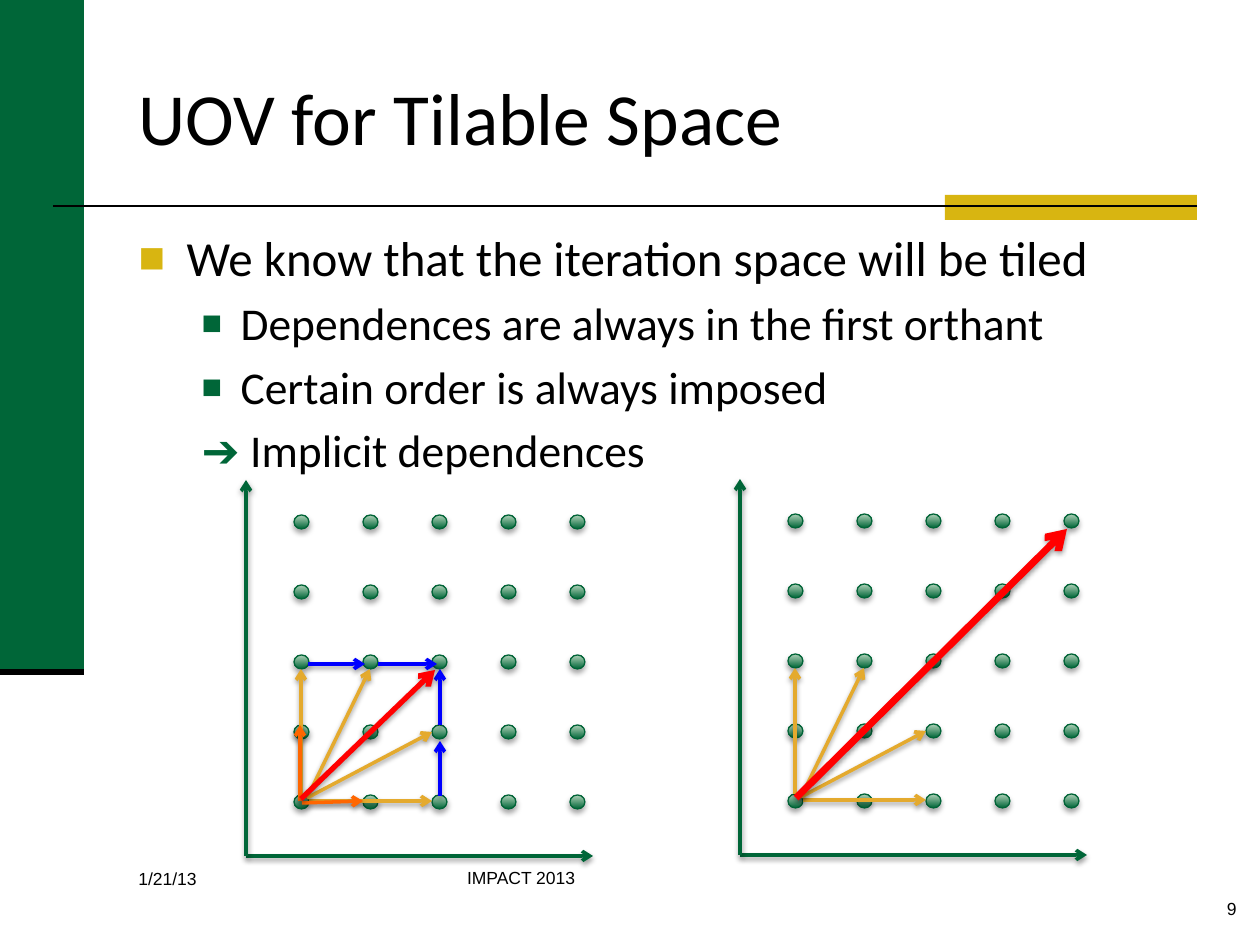
from lxml.etree import SubElement
from pptx import Presentation
from pptx.dml.color import RGBColor
from pptx.enum.shapes import MSO_CONNECTOR, MSO_SHAPE
from pptx.enum.text import MSO_ANCHOR, MSO_AUTO_SIZE, PP_ALIGN
from pptx.oxml.ns import qn
from pptx.util import Emu, Pt

SCALE = 914400 / 126  # EMU per px
BLACK = RGBColor(0x00, 0x00, 0x00)
GREEN = RGBColor(0x00, 0x66, 0x38)
EDGE = RGBColor(0x00, 0x64, 0x37)
MINT = RGBColor(0xB1, 0xD2, 0xB9)
GOLD = RGBColor(0xD8, 0xB5, 0x11)
AMBER = RGBColor(0xE4, 0xAA, 0x2E)
ORANGE = RGBColor(0xFF, 0x66, 0x00)
BLUE = RGBColor(0x00, 0x00, 0xFF)
RED = RGBColor(0xFF, 0x00, 0x00)


def px(*vals):
    return [Emu(round(v * SCALE)) for v in vals]


def add(parent, tag, **attrs):
    return SubElement(parent, qn(tag), {k: str(v) for k, v in attrs.items()})


class Deck:
    head, body, small = "Calibri", "Calibri", "Arial"

    def __init__(self):
        self.prs = Presentation()
        self.prs.slide_width, self.prs.slide_height = px(1260, 945)
        self.slide = self.prs.slides.add_slide(self.prs.slide_layouts[1])
        self.shapes = self.slide.shapes

    def font(self, para, name, size, color=BLACK):
        para.font.name, para.font.size = name, Pt(size)
        para.font.color.rgb = color

    def place(self, shape, box):
        shape.left, shape.top, shape.width, shape.height = px(*box)

    def title(self, box, text):
        shape = self.shapes.title
        self.place(shape, box)
        frame = shape.text_frame
        frame.text = text
        frame.vertical_anchor = MSO_ANCHOR.MIDDLE
        frame.auto_size = MSO_AUTO_SIZE.NONE
        para = frame.paragraphs[0]
        para.alignment = PP_ALIGN.LEFT
        self.font(para, self.head, 42)

    def bullet(self, para, left, hang, color=None, size=100):
        props = para._p.get_or_add_pPr()
        margin, indent = px(left, -hang)
        props.set("marL", str(margin))
        props.set("indent", str(indent))
        if color is None:
            add(props, "a:buNone")
            return
        add(add(props, "a:buClr"), "a:srgbClr", val=color)
        add(props, "a:buSzPct", val=size * 1000)
        add(props, "a:buFont", typeface="Arial")
        add(props, "a:buChar", char="■")

    def list(self, box, lead, items, last):
        shape = self.slide.placeholders[1]
        self.place(shape, box)
        frame = shape.text_frame
        frame.auto_size = MSO_AUTO_SIZE.NONE
        para = frame.paragraphs[0]
        para.text = lead
        self.bullet(para, 48, 48, GOLD, 90)
        para.space_before = Pt(0)
        self.font(para, self.body, 28)
        for item in items:
            para = frame.add_paragraph()
            para.text, para.level = item, 1
            self.bullet(para, 102, 39, GREEN, 75)
            self.font(para, self.body, 26)
        # The closing line carries its own arrow sign
        para = frame.add_paragraph()
        para.level = 1
        self.bullet(para, 63, 0)
        para.font.size = Pt(26)
        sign, words = last
        for text, name, color in ((sign, "Arial", GREEN),
                                  (words, self.body, BLACK)):
            run = para.add_run()
            run.text, run.font.name = text, name
            run.font.color.rgb = color

    def label(self, box, text, align=PP_ALIGN.LEFT):
        frame = self.shapes.add_textbox(*px(*box)).text_frame
        frame.word_wrap = True
        para = frame.paragraphs[0]
        para.text, para.alignment = text, align
        self.font(para, self.small, 10)

    def shade(self, shape, alpha, blur, dist):
        effects = add(shape._element.spPr, "a:effectLst")
        shadow = add(effects, "a:outerShdw", blurRad=Pt(blur), dist=Pt(dist),
                     dir=5400000, rotWithShape=0)
        color = add(shadow, "a:srgbClr", val=BLACK)
        add(color, "a:alpha", val=alpha * 1000)

    def rect(self, box, color):
        shape = self.shapes.add_shape(MSO_SHAPE.RECTANGLE, *px(*box))
        shape.shadow.inherit = False
        shape.fill.solid()
        shape.fill.fore_color.rgb = color
        shape.line.fill.background()

    def dot(self, left, top):
        shape = self.shapes.add_shape(MSO_SHAPE.OVAL, *px(left, top, 15, 14))
        shape.fill.gradient()
        shape.fill.gradient_angle = 90
        for stop, color, pos in zip(shape.fill.gradient_stops,
                                    (GREEN, MINT), (0, 1)):
            stop.color.rgb, stop.position = color, pos
        shape.line.color.rgb = EDGE
        shape.line.width = Pt(0.75)
        self.shade(shape, 35, 3.1, 1.8)

    def line(self, ends, color, width):
        shape = self.shapes.add_connector(MSO_CONNECTOR.STRAIGHT, *px(*ends))
        shape.line.color.rgb = color
        shape.line.width = Pt(width)
        return shape

    def rule(self, ends, width):
        add(self.line(ends, BLACK, width)._element.spPr, "a:effectLst")

    def arrow(self, ends, color, width=2):
        shape = self.line(ends, color, width)
        add(shape.line._get_or_add_ln(), "a:tailEnd", type="arrow")
        self.shade(shape, 38, 3.1, 1.6)

    def space(self, dx, dy):
        """Iteration space: 5 by 5 points, axes and dependences."""
        for col in range(5):
            for row in range(5):
                self.dot(294 + dx + 69 * col, 515 + dy + 70 * row)
        axes = [(246, 856, 593, 856), (246, 856, 246, 480)]
        deps = [(309, 801, 432, 801), (301, 795, 301, 669),
                (307, 798, 370, 669), (307, 798, 432, 732)]
        for group, color in ((axes, GREEN), (deps, AMBER)):
            for x1, y1, x2, y2 in group:
                self.arrow((x1 + dx, y1 + dy, x2 + dx, y2 + dy), color)


def main():
    deck = Deck()

    # Side band and header rule
    deck.rect((0, 0, 84, 672), GREEN)
    deck.rect((945, 195, 252, 25), GOLD)
    deck.rule((53, 206, 1197, 206), 1.5)
    deck.rule((0, 672, 84, 672), 3.5)

    # Title and list
    deck.title((126, 38, 1071, 157), "UOV for Tilable Space")
    deck.list((126, 221, 1071, 624),
              "We know that the iteration space will be tiled",
              ["Dependences are always in the first orthant",
               "Certain order is always imposed"],
              ("➔", " Implicit dependences"))

    # Footer
    deck.label((126, 862, 273, 63), "1/21/13")
    deck.label((316, 861, 410, 63), "IMPACT 2013", PP_ALIGN.CENTER)
    deck.label((987, 892, 262, 32), "9", PP_ALIGN.RIGHT)

    # Left space with implicit dependences and imposed order
    deck.space(0, 0)
    for ends in ((300, 801, 300, 725), (302, 803, 363, 801)):
        deck.arrow(ends, ORANGE)
    for ends in ((308, 664, 365, 664), (378, 664, 437, 664),
                 (440, 796, 440, 741), (440, 725, 440, 669)):
        deck.arrow(ends, BLUE)

    # Right space, then the occupancy vectors
    deck.space(494, -1)
    deck.arrow((796, 798, 1067, 529), RED, 4)
    deck.arrow((301, 799, 435, 670), RED, 3)

    deck.prs.save("out.pptx")


if __name__ == "__main__":
    main()
